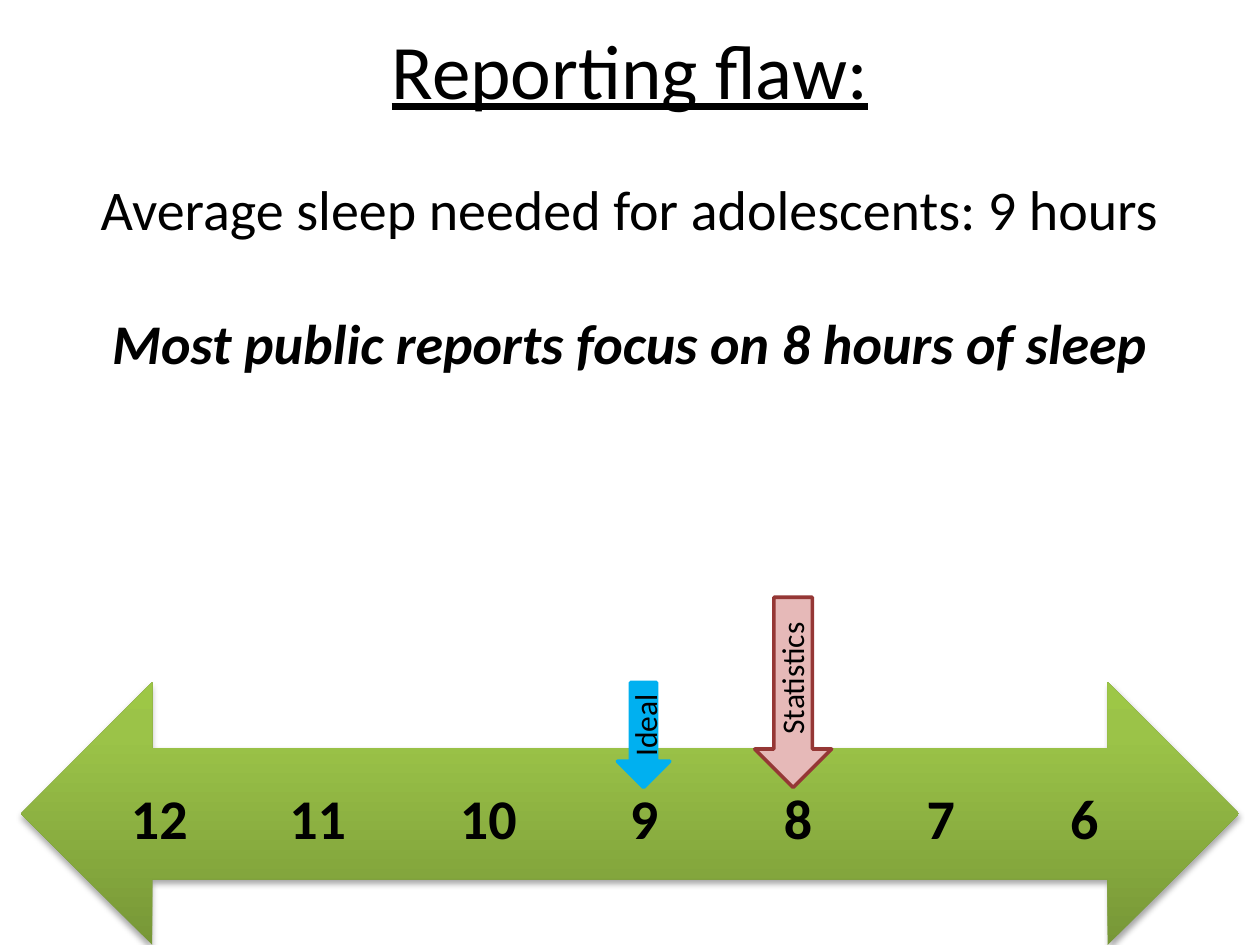
from dataclasses import dataclass
from typing import Optional

from lxml import etree
from pptx import Presentation, util as u
from pptx.dml import color as col
from pptx.enum import shapes as sh, text as tx
from pptx.oxml import ns, parse_xml

Pt = u.Pt


@dataclass(frozen=True)
class Theme:
    font: str = "Calibri"
    ink: str = "000000"
    pink: str = "E6B9B8"
    red: str = "953735"
    blue: str = "00B0F0"
    ramp: tuple = ((0, "779737"), (80, "9BC348"), (100, "9DC746"))
    title: int = 44
    body: int = 32
    label: int = 18
    edge: int = 2


@dataclass(frozen=True)
class Box:
    x: float
    y: float
    w: float
    h: float


@dataclass(frozen=True)
class Label:
    words: str
    box: Box
    size: int
    bold: bool = False
    slant: bool = False
    under: bool = False
    mid: bool = False
    turn: int = 0
    tabs: tuple = ()


@dataclass(frozen=True)
class Arrow:
    kind: int
    box: Box
    fill: Optional[str] = None
    line: Optional[str] = None


T = Theme()
WIDE, DOWN = sh.MSO_SHAPE.LEFT_RIGHT_ARROW, sh.MSO_SHAPE.DOWN_ARROW
HOURS = (12, 11, 10, 9, 8, 7, 6)
STOPS = (60, 150.5, 248, 337, 425, 506.5, 588.5)

SCALE = Arrow(WIDE, Box(12, 390, 696, 150))
MARKS = (
    Arrow(DOWN, Box(431.3, 341.3, 44, 108.7), T.pink, T.red),
    Arrow(DOWN, Box(352.8, 390, 30, 60), T.blue, T.blue),
)
TITLE = Label("Reporting flaw:", Box(24, 0, 672, 78), T.title,
              under=True, mid=True)
NEED = Label("Average sleep needed for adolescents: 9 hours",
             Box(12, 96, 696, 264), T.body, mid=True)
NOTES = (
    Label("Most public reports focus on 8 hours of sleep",
          Box(0, 172.8, 720, 46), T.body, bold=True, slant=True, mid=True),
    Label("".join(f"\t{n}" for n in HOURS), Box(24, 444, 654, 46), T.body,
          bold=True, tabs=STOPS),
    Label("Ideal", Box(333.4, 390, 70, 29), T.label, turn=270),
    Label("Statistics", Box(411, 370.8, 83, 29), T.label, turn=270),
)


def place(box: Box) -> tuple:
    return Pt(box.x), Pt(box.y), Pt(box.w), Pt(box.h)


def write(slide, item: Label, anchor=tx.MSO_ANCHOR.TOP) -> None:
    shape = slide.shapes.add_textbox(*place(item.box))
    shape.rotation = item.turn
    frame = shape.text_frame
    frame.word_wrap = True
    frame.vertical_anchor = anchor
    para = frame.paragraphs[0]
    para.text = item.words
    para.alignment = tx.PP_ALIGN.CENTER if item.mid else tx.PP_ALIGN.LEFT
    # Centred tab stops spread the hours along the scale
    if item.tabs:
        tabs = etree.SubElement(para._p.get_or_add_pPr(), ns.qn("a:tabLst"))
        for stop in item.tabs:
            etree.SubElement(tabs, ns.qn("a:tab"), pos=str(Pt(stop)), algn="ctr")
    font = para.font
    font.name, font.size = T.font, Pt(item.size)
    font.bold, font.italic, font.underline = item.bold, item.slant, item.under
    font.color.rgb = col.RGBColor.from_string(T.ink)


def draw(slide, item: Arrow):
    shape = slide.shapes.add_shape(item.kind, *place(item.box))
    shape.shadow.inherit = False
    if item.fill:
        shape.fill.solid()
        shape.fill.fore_color.rgb = col.RGBColor.from_string(item.fill)
    if item.line:
        shape.line.color.rgb = col.RGBColor.from_string(item.line)
        shape.line.width = Pt(T.edge)
    else:
        shape.line.fill.background()
    return shape


def shade(shape) -> None:
    """Give the scale its upward gradient and soft shadow."""
    stops = "".join(f'<a:gs pos="{at * 1000}"><a:srgbClr val="{rgb}"/></a:gs>'
                    for at, rgb in T.ramp)
    prop = shape._element.spPr
    prop.find(ns.qn("a:prstGeom")).addnext(parse_xml(
        f'<a:gradFill {ns.nsdecls("a")} rotWithShape="1"><a:gsLst>{stops}</a:gsLst>'
        '<a:lin ang="16200000" scaled="0"/></a:gradFill>'))
    prop.find(ns.qn("a:effectLst")).append(parse_xml(
        f'<a:outerShdw {ns.nsdecls("a")} blurRad="{Pt(3.1)}" dist="{Pt(1.8)}" '
        'dir="5400000" rotWithShape="0"><a:srgbClr val="000000">'
        '<a:alpha val="35000"/></a:srgbClr></a:outerShdw>'))


def main() -> None:
    deck = Presentation()
    deck.slide_width, deck.slide_height = Pt(720), Pt(540)
    slide = deck.slides.add_slide(deck.slide_layouts[6])
    # Title, scale and main statement
    write(slide, TITLE, tx.MSO_ANCHOR.MIDDLE)
    shade(draw(slide, SCALE))
    write(slide, NEED)
    # Markers above the scale, then all labels
    for mark in MARKS:
        draw(slide, mark)
    for note in NOTES:
        write(slide, note)
    deck.save("out.pptx")


if __name__ == "__main__":
    main()
